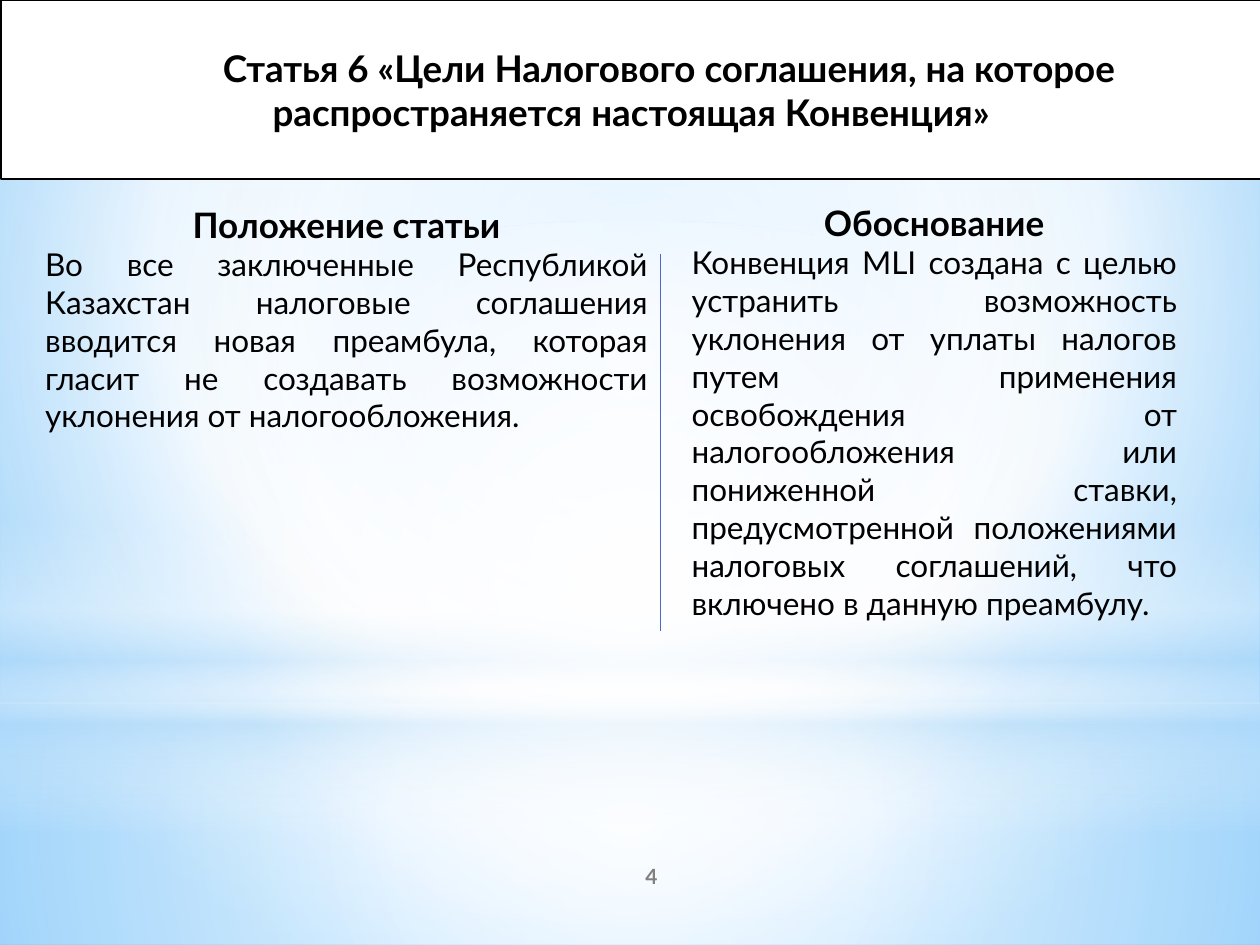
import dataclasses

import lxml.etree
import pptx
import pptx.dml.color
import pptx.enum.shapes
import pptx.enum.text
import pptx.oxml.ns
import pptx.util

SHAPE = pptx.enum.shapes.MSO_SHAPE
ALIGN = pptx.enum.text.PP_ALIGN
ANCHOR = pptx.enum.text.MSO_ANCHOR
COLUMNS, ROWS = 100, 75
CENTRE = (50, 50, 50, 50)


@dataclasses.dataclass(frozen=True)
class Theme:
    """Colours, font and type sizes of the slide."""

    font: str = "Lato"
    ink: str = "000000"
    paper: str = "FFFFFF"
    haze: str = "B4DCFA"
    sky: str = "9ED5FF"
    deep_sky: str = "5BB9FF"
    rule: str = "4E67C8"
    muted: str = "808080"
    title: int = 21
    heading: int = 20
    body: int = 18
    number: int = 12


THEME = Theme()


def rgb(code):
    """Turn a hex code into a colour."""
    return pptx.dml.color.RGBColor.from_string(code)


def across(columns):
    """Convert grid columns to a length."""
    return pptx.util.Inches(columns * 10 / COLUMNS)


def down(rows):
    """Convert grid rows to a length."""
    return pptx.util.Inches(rows * 7.5 / ROWS)


def place(left, top, width, height):
    """Convert a grid cell range to a position and size."""
    return across(left), down(top), across(width), down(height)


def add_node(parent, tag, **attributes):
    """Append a DrawingML element with the given attributes."""
    node = lxml.etree.SubElement(parent, pptx.oxml.ns.qn(tag))
    for name, value in attributes.items():
        node.set(name, str(value))
    return node


def paint_gradient(fill, owner, stops, focus=None):
    """Fill with (position, colour, opacity) stops, radial if focus is given."""
    fill.gradient()
    gradient = next(owner.iter(pptx.oxml.ns.qn("a:gradFill")))
    for child in list(gradient):
        gradient.remove(child)
    stop_list = add_node(gradient, "a:gsLst")
    for position, code, opacity in stops:
        stop = add_node(stop_list, "a:gs", pos=position * 1000)
        colour = add_node(stop, "a:srgbClr", val=code)
        if opacity < 100:
            add_node(colour, "a:alpha", val=opacity * 1000)
    if focus:
        shade = add_node(gradient, "a:path", path="circle")
        edges = {side: share * 1000 for side, share in zip("ltrb", focus)}
        add_node(shade, "a:fillToRect", **edges)
    else:
        add_node(gradient, "a:lin", ang=90 * 60000, scaled=0)


def add_glow(page, kind, cells, stops, focus=CENTRE):
    """Add a borderless gradient layer."""
    glow = page.shapes.add_shape(kind, *place(*cells))
    glow.shadow.inherit = False
    glow.line.fill.background()
    paint_gradient(glow.fill, glow.fill._xPr, stops, focus)


def add_band(page, cells):
    """Add the outlined title band."""
    band = page.shapes.add_shape(SHAPE.RECTANGLE, *place(*cells))
    band.shadow.inherit = False
    band.fill.solid()
    band.fill.fore_color.rgb = rgb(THEME.paper)
    band.line.color.rgb = rgb(THEME.ink)
    band.line.width = pptx.util.Pt(1.25)
    return band


def add_box(page, cells):
    """Add an empty text box."""
    return page.shapes.add_textbox(*place(*cells))


def write(box, text, size, bold=False, color=THEME.ink, align=ALIGN.CENTER,
          anchor=ANCHOR.MIDDLE, indent=0):
    """Write one paragraph into the box, after any text already there."""
    frame = box.text_frame
    frame.word_wrap = True
    frame.vertical_anchor = anchor
    para = frame.add_paragraph() if frame.text else frame.paragraphs[0]
    para.alignment = align
    if indent:
        para._p.get_or_add_pPr().set("indent", str(across(indent)))
    span = para.add_run()
    span.text = text
    span.font.name = THEME.font
    span.font.size = pptx.util.Pt(size)
    span.font.bold = bold
    span.font.color.rgb = rgb(color)


def add_column(page, cells, heading, body, anchor):
    """Add a centred heading over justified text."""
    box = add_box(page, cells)
    write(box, heading, THEME.heading, bold=True, anchor=anchor)
    write(box, body, THEME.body, align=ALIGN.JUSTIFY, anchor=anchor)


def add_rule(page, column, top, bottom):
    """Add a thin vertical divider."""
    rule = page.shapes.add_connector(
        pptx.enum.shapes.MSO_CONNECTOR.STRAIGHT,
        across(column), down(top), across(column), down(bottom))
    rule.line.color.rgb = rgb(THEME.rule)
    rule.line.width = pptx.util.Pt(0.75)
    add_node(rule._element.spPr, "a:effectLst")


def add_backdrop(page):
    """Paint the background and its layers of light."""
    white, haze = THEME.paper, THEME.haze
    paint_gradient(
        page.background.fill, page._element,
        [(0, THEME.sky, 100), (60, white, 100), (100, THEME.deep_sky, 100)],
        (20, 10, 20, 60))
    add_glow(page, SHAPE.RECTANGLE, (0, 55.8, COLUMNS, 19.2),
             [(0, white, 91), (37, white, 76), (100, haze, 79)])
    add_glow(page, SHAPE.RECTANGLE, (0, 0, COLUMNS, 55.8),
             [(0, white, 89), (48, white, 62), (100, haze, 79)])
    add_glow(page, SHAPE.RECTANGLE, (0, 41.2, COLUMNS, 25),
             [(0, white, 0), (29, white, 30), (45, haze, 40),
              (55, white, 26), (65, haze, 60), (100, white, 0)], None)
    add_glow(page, SHAPE.OVAL, (0, 17.5, COLUMNS, 55.8),
             [(0, white, 100), (56, white, 0)])


def main():
    """Build and save the slide."""
    deck = pptx.Presentation()
    deck.slide_width, deck.slide_height = across(COLUMNS), down(ROWS)
    page = deck.slides.add_slide(deck.slide_layouts[6])
    add_backdrop(page)
    write(add_band(page, (0.1, 0, COLUMNS, 14.2)),
          "Статья 6 «Цели Налогового соглашения, на которое "
          "распространяется настоящая Конвенция»",
          THEME.title, bold=True, indent=6)
    add_column(page, (2.6, 11.5, 49.8, 27.6), "Положение статьи",
               "Во все заключенные Республикой Казахстан налоговые соглашения "
               "вводится новая преамбула, которая гласит не создавать "
               "возможности уклонения от налогообложения.", ANCHOR.MIDDLE)
    add_column(page, (53.9, 15.5, 40.5, 34.7), "Обоснование",
               "Конвенция MLI создана с целью устранить возможность уклонения "
               "от уплаты налогов путем применения освобождения от "
               "налогообложения или пониженной ставки, предусмотренной "
               "положениями налоговых соглашений, что включено в данную "
               "преамбулу.", ANCHOR.TOP)
    add_rule(page, 52.4, 20.2, 50.1)
    write(add_box(page, (41.7, 67.5, 20, 4)), "4", THEME.number,
          bold=True, color=THEME.muted)
    deck.save("out.pptx")


if __name__ == "__main__":
    main()
